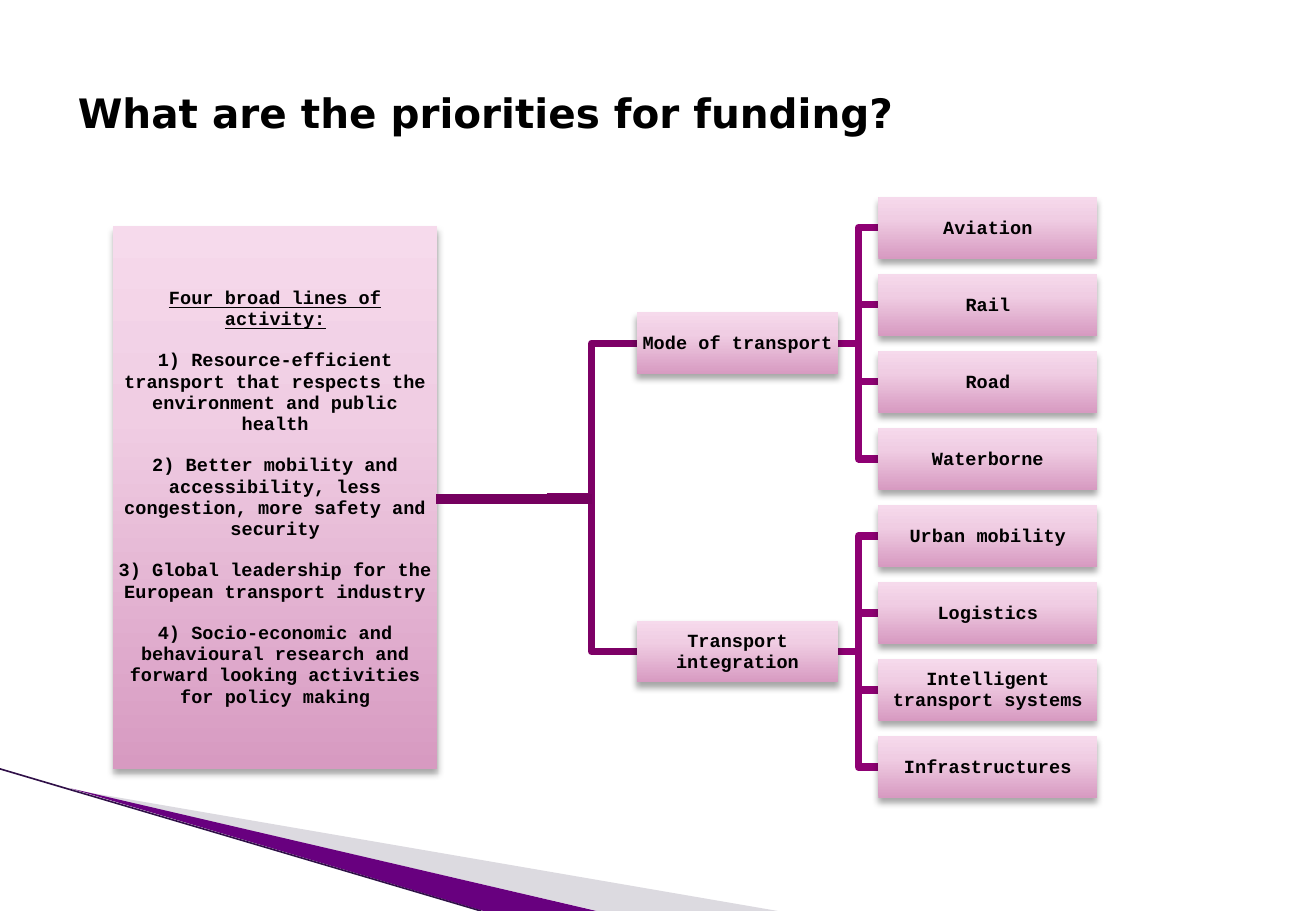
from typing import NamedTuple

from lxml.etree import SubElement
from pptx import Presentation
from pptx.dml.color import RGBColor
from pptx.enum.dml import MSO_LINE
from pptx.enum.shapes import MSO_CONNECTOR, MSO_SHAPE
from pptx.enum.text import MSO_ANCHOR, PP_ALIGN
from pptx.oxml import parse_xml
from pptx.oxml.ns import nsdecls, qn
from pptx.shapes.autoshape import Shape
from pptx.shapes.connector import Connector
from pptx.slide import Slide
from pptx.util import Inches, Pt

BLACK = RGBColor(0x00, 0x00, 0x00)
VIOLET = RGBColor(0x68, 0x00, 0x7F)
PALE_GREY = RGBColor(0xDC, 0xDA, 0xE0)
DARK_VIOLET = RGBColor(0x30, 0x10, 0x48)
LEAF_LINK = RGBColor(0x8E, 0x00, 0x73)
BRANCH_LINK = RGBColor(0x7D, 0x00, 0x66)
TRUNK_LINK = RGBColor(0x75, 0x00, 0x5F)
GRADIENT_STOPS = ((0, "D79AC1"), (65, "F0CDE3"), (100, "F6DAEC"))

BOX_HEIGHT = 0.51
BRANCH_LEFT, BRANCH_WIDTH = 5.24, 1.66
LEAF_LEFT, LEAF_WIDTH = 7.23, 1.8
FIRST_LEAF_TOP, LAST_LEAF_TOP = 1.62, 6.06
TRUNK_X, TRUNK_Y = 4.5, 4.09


class Branch(NamedTuple):
    label: str
    leaves: tuple[str, ...]


class Box(NamedTuple):
    left: float
    top: float
    width: float
    height: float = BOX_HEIGHT

    @property
    def right(self) -> float:
        return self.left + self.width

    @property
    def middle(self) -> float:
        return self.top + self.height / 2


class Link(NamedTuple):
    start: tuple[float, float]
    end: tuple[float, float]
    color: RGBColor
    width: float = 4.33
    kind: MSO_CONNECTOR = MSO_CONNECTOR.ELBOW


class Swoosh(NamedTuple):
    points: tuple[tuple[float, float], ...]
    color: RGBColor


BRANCHES = (
    Branch("Mode of transport", ("Aviation", "Rail", "Road", "Waterborne")),
    Branch(
        "Transport integration",
        ("Urban mobility", "Logistics", "Intelligent transport systems", "Infrastructures"),
    ),
)
ACTIVITY_HEADING = "Four broad lines of activity:"
ACTIVITIES = (
    "1) Resource-efficient transport that respects the environment and public health",
    "2) Better mobility and accessibility, less congestion, more safety and security",
    "3) Global leadership for the European transport industry",
    "4) Socio-economic and behavioural research and forward looking activities "
    "for policy making",
)
SWOOSHES = (
    Swoosh(((0.59, 6.5), (6.4, 7.5), (4.92, 7.5)), PALE_GREY),
    Swoosh(((0.58, 6.49), (4.91, 7.5), (3.98, 7.5)), VIOLET),
)


def add_swoosh(slide: Slide, swoosh: Swoosh) -> None:
    points = [(Inches(x), Inches(y)) for x, y in swoosh.points]
    builder = slide.shapes.build_freeform(*points[0])
    builder.add_line_segments(points[1:])
    shape = builder.convert_to_shape()
    shape.shadow.inherit = False
    shape.fill.solid()
    shape.fill.fore_color.rgb = swoosh.color
    shape.line.fill.background()


def add_link(slide: Slide, link: Link) -> Connector:
    ends = [Inches(length) for length in link.start + link.end]
    connector = slide.shapes.add_connector(link.kind, *ends)
    connector.line.color.rgb = link.color
    connector.line.width = Pt(link.width)
    connector.line.dash_style = MSO_LINE.SOLID
    properties = connector._element.spPr
    SubElement(properties.find(qn("a:ln")), qn("a:round"))
    SubElement(properties, qn("a:effectLst"))
    return connector


def apply_pink_gradient_and_shadow(shape: Shape) -> None:
    shape.line.fill.background()
    shape.shadow.inherit = False
    stops = "".join(
        f'<a:gs pos="{position * 1000}"><a:srgbClr val="{color}"/></a:gs>'
        for position, color in GRADIENT_STOPS
    )
    properties = shape._element.spPr
    properties.find(qn("a:ln")).addprevious(
        parse_xml(
            f'<a:gradFill {nsdecls("a")} rotWithShape="1"><a:gsLst>{stops}</a:gsLst>'
            '<a:lin ang="16200000" scaled="0"/></a:gradFill>'
        )
    )
    properties.find(qn("a:effectLst")).append(
        parse_xml(
            f'<a:outerShdw {nsdecls("a")} blurRad="{Pt(4)}" dist="{Pt(3)}" dir="5400000" '
            'rotWithShape="0"><a:srgbClr val="000000"><a:alpha val="35000"/></a:srgbClr>'
            "</a:outerShdw>"
        )
    )


def add_box(slide: Slide, box: Box, texts: tuple[str, ...], underline_first: bool = False) -> None:
    shape = slide.shapes.add_shape(MSO_SHAPE.RECTANGLE, *[Inches(length) for length in box])
    apply_pink_gradient_and_shadow(shape)
    frame = shape.text_frame
    frame.word_wrap = True
    frame.vertical_anchor = MSO_ANCHOR.MIDDLE
    frame.margin_left = frame.margin_right = Inches(0.01)
    frame.margin_top = frame.margin_bottom = Inches(0.01)
    for index, text in enumerate(texts):
        paragraph = frame.paragraphs[0] if index == 0 else frame.add_paragraph()
        paragraph.alignment = PP_ALIGN.CENTER
        paragraph.line_spacing = 0.95
        paragraph.space_before = Pt(12 if index else 0)
        run = paragraph.add_run()
        run.text = text
        run.font.name = "Courier New"
        run.font.size = Pt(11)
        run.font.bold = True
        run.font.underline = underline_first and index == 0
        run.font.color.rgb = BLACK


def add_title(slide: Slide, text: str) -> None:
    title = slide.shapes.title
    title.left, title.top = Inches(0.54), Inches(0.3)
    title.width, title.height = Inches(8.54), Inches(1.25)
    title.text_frame.vertical_anchor = MSO_ANCHOR.MIDDLE
    paragraph = title.text_frame.paragraphs[0]
    paragraph.alignment = PP_ALIGN.LEFT
    run = paragraph.add_run()
    run.text = text
    run.font.name = "DejaVu Sans"
    run.font.size = Pt(24)
    run.font.bold = True
    run.font.color.rgb = BLACK


def add_tree(slide: Slide) -> None:
    leaf_count = sum(len(branch.leaves) for branch in BRANCHES)
    pitch = (LAST_LEAF_TOP - FIRST_LEAF_TOP) / (leaf_count - 1)
    first_top = FIRST_LEAF_TOP
    for branch in BRANCHES:
        count = len(branch.leaves)
        leaf_boxes = [Box(LEAF_LEFT, first_top + row * pitch, LEAF_WIDTH) for row in range(count)]
        branch_box = Box(BRANCH_LEFT, first_top + (count - 1) * pitch / 2, BRANCH_WIDTH)
        branch_end = (branch_box.left, branch_box.middle)
        add_link(slide, Link((TRUNK_X, TRUNK_Y), branch_end, BRANCH_LINK))
        for leaf, leaf_box in zip(branch.leaves, leaf_boxes):
            start = (branch_box.right, branch_box.middle)
            add_link(slide, Link(start, (leaf_box.left, leaf_box.middle), LEAF_LINK))
            add_box(slide, leaf_box, (leaf,))
        add_box(slide, branch_box, (branch.label,))
        first_top += count * pitch


def main() -> None:
    presentation = Presentation()
    presentation.slide_width, presentation.slide_height = Inches(10.83), Inches(7.5)
    slide = presentation.slides.add_slide(presentation.slide_layouts[5])
    add_title(slide, "What are the priorities for funding?")
    for swoosh in SWOOSHES:
        add_swoosh(slide, swoosh)
    add_link(slide, Link((0, 6.33), (3.96, 7.5), DARK_VIOLET, 0.95, MSO_CONNECTOR.STRAIGHT))
    add_tree(slide)
    add_box(slide, Box(0.93, 1.86, 2.67, 4.47), (ACTIVITY_HEADING, *ACTIVITIES), True)
    add_link(slide, Link((4.87, 4.11), (3.59, 4.11), TRUNK_LINK, 6, MSO_CONNECTOR.STRAIGHT))
    presentation.save("out.pptx")


if __name__ == "__main__":
    main()
